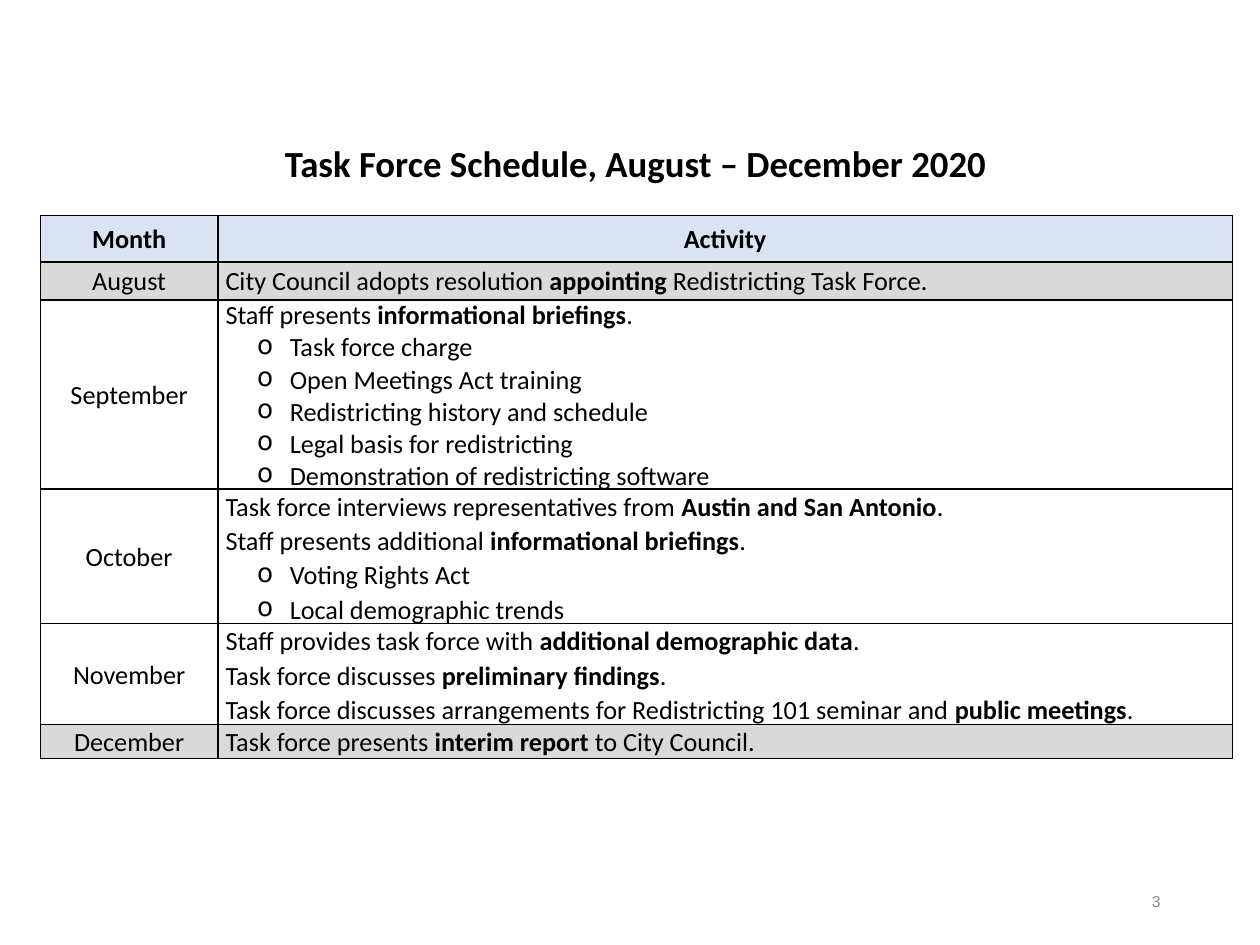
"""Build the task force schedule slide on a grid of 100 columns by 75 rows."""
from lxml.etree import SubElement as Sub
from pptx import Presentation
from pptx.dml.color import RGBColor as Rgb
from pptx.enum.text import MSO_ANCHOR as Anchor, PP_ALIGN as Align
from pptx.oxml.ns import qn
from pptx.util import Inches, Pt

COLORS = {"ink": "000000", "page": "8C8C8C", "head": "DAE3F3", "gray": "D9D9D9"}
UNIT = Inches(0.1)
COLS = [14.1, 80.5]
SPACE = 1.07
ROWS = [
    (3.7, "head", SPACE, "*Month*", ["*Activity*"]),
    (3, "gray", SPACE, "August",
     ["City Council adopts resolution *appointing* Redistricting Task Force."]),
    (15, None, 1, "September",
     ["Staff presents *informational briefings*.",
      "- Task force charge",
      "- Open Meetings Act training",
      "- Redistricting history and schedule",
      "- Legal basis for redistricting",
      "- Demonstration of redistricting software"]),
    (10.7, None, SPACE, "October",
     ["Task force interviews representatives from *Austin and San Antonio*.",
      "Staff presents additional *informational briefings*.",
      "- Voting Rights Act",
      "- Local demographic trends"]),
    (8, None, SPACE, "November",
     ["Staff provides task force with *additional demographic data*.",
      "Task force discusses *preliminary findings*.",
      "Task force discusses arrangements for Redistricting 101 seminar"
      " and *public meetings*."]),
    (2.7, "gray", SPACE, "December",
     ["Task force presents *interim report *to City Council."]),
]


def grid(*nums):
    """Turn grid counts into lengths."""
    return [round(num * UNIT) for num in nums]


def style(font, size, color="ink", name="Calibri", bold=False):
    """Set the look of a font."""
    font.size, font.name, font.bold = Pt(size), name, bold
    font.color.rgb = Rgb.from_string(COLORS[color])


def add_label(slide, text, box, align, space, **look):
    """Add a one-line text box."""
    frame = slide.shapes.add_textbox(*grid(*box)).text_frame
    frame.word_wrap = True
    frame.vertical_anchor = Anchor.MIDDLE
    frame.text = text
    para = frame.paragraphs[0]
    para.alignment, para.line_spacing = align, space
    style(para.runs[0].font, **look)


def add_bullet(para):
    """Give a paragraph a hanging round bullet."""
    props = para._p.get_or_add_pPr()
    props.set("marL", str(Inches(0.51)))
    props.set("indent", str(Inches(-0.26)))
    Sub(props, qn("a:buChar"), char="o")


def write(para, text, align, space):
    """Fill a paragraph, with bold between stars and a bullet after a dash."""
    if text.startswith("- "):
        add_bullet(para)
    para.alignment, para.line_spacing = align, space
    for num, part in enumerate(text.removeprefix("- ").split("*")):
        if part:
            run = para.add_run()
            run.text = part
            style(run.font, 15, bold=num % 2 == 1)


def add_edges(cell):
    """Draw thin lines on all sides of a cell."""
    props = cell._tc.get_or_add_tcPr()
    for side in "LRTB":
        line = Sub(props, qn(f"a:ln{side}"), w=str(Pt(1)))
        Sub(Sub(line, qn("a:solidFill")), qn("a:srgbClr"), val=COLORS["ink"])


def fill_cell(cell, lines, fill, align, space):
    """Set the text, edges and fill of a cell."""
    cell.margin_left = cell.margin_right = Inches(0.06)
    cell.margin_top = cell.margin_bottom = 0
    cell.vertical_anchor = Anchor.MIDDLE
    add_edges(cell)
    if fill:
        cell.fill.solid()
        cell.fill.fore_color.rgb = Rgb.from_string(COLORS[fill])
    else:
        cell.fill.background()
    frame = cell.text_frame
    for num, line in enumerate(lines):
        para = frame.add_paragraph() if num else frame.paragraphs[0]
        write(para, line, align, space)


def add_plan(slide):
    """Add the table of months and activities."""
    high = sum(row[0] for row in ROWS)
    box = grid(3.2, 17.1, sum(COLS), high)
    table = slide.shapes.add_table(len(ROWS), len(COLS), *box).table
    table.first_row = table.horz_banding = False
    for col, wide in zip(table.columns, grid(*COLS)):
        col.width = wide
    for num, (tall, fill, space, month, lines) in enumerate(ROWS):
        table.rows[num].height = grid(tall)[0]
        align = Align.LEFT if num else Align.CENTER
        fill_cell(table.cell(num, 0), [month], fill, Align.CENTER, SPACE)
        fill_cell(table.cell(num, 1), lines, fill, align, space)


def main():
    """Build and save the slide."""
    deck = Presentation()
    deck.slide_width, deck.slide_height = grid(100, 75)
    slide = deck.slides.add_slide(deck.slide_layouts[6])
    add_label(slide, "Task Force Schedule, August – December 2020",
              (3.2, 10.9, 94.5, 4.5), Align.CENTER, 0.9, size=21, bold=True)
    add_label(slide, "3", (70.6, 69.5, 22.5, 4), Align.RIGHT, 1,
              size=9, color="page", name="Arial")
    add_plan(slide)
    deck.save("out.pptx")


if __name__ == "__main__":
    main()
